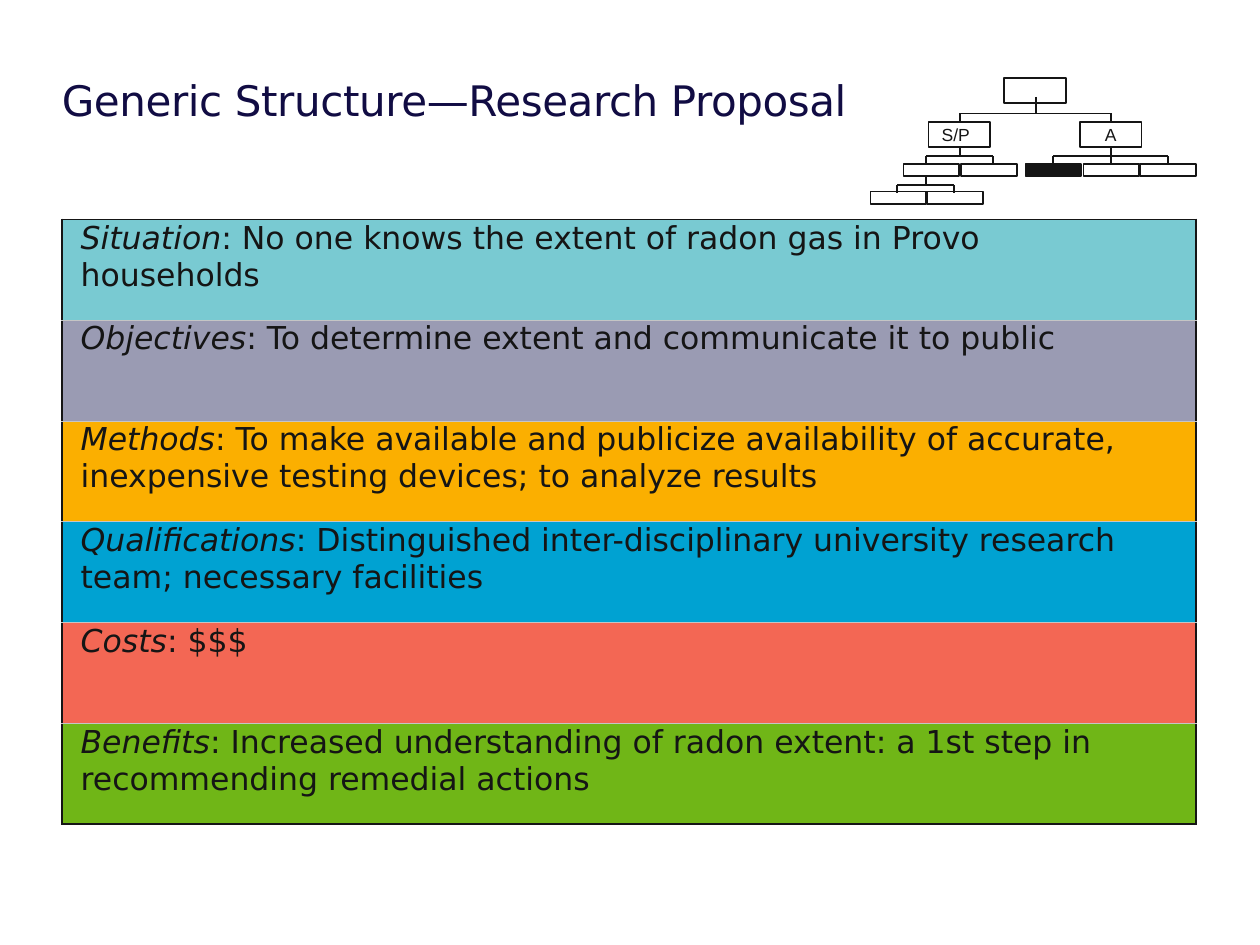
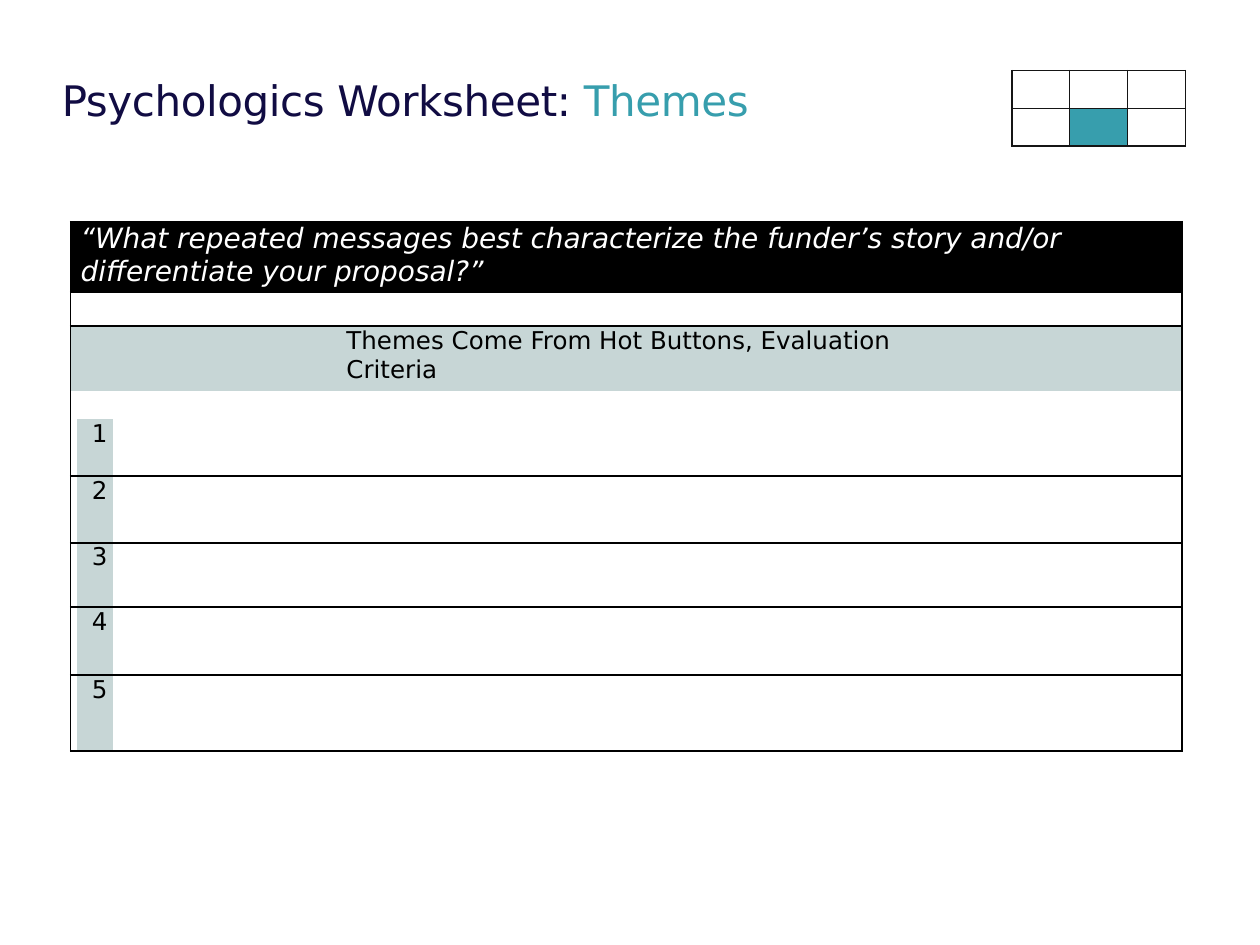
from dataclasses import dataclass

from lxml.etree import SubElement
from pptx import Presentation
from pptx.dml.color import RGBColor
from pptx.enum.shapes import MSO_CONNECTOR, MSO_SHAPE
from pptx.enum.text import MSO_ANCHOR, MSO_AUTO_SIZE, PP_ALIGN
from pptx.oxml.ns import qn
from pptx.util import Inches, Pt


@dataclass(frozen=True)
class Theme:
    font: str = "DejaVu Sans"
    label_font: str = "Arial"
    navy: str = "110C43"
    teal: str = "379EAD"
    ink: str = "151515"
    black: str = "000000"
    white: str = "FFFFFF"
    rule: str = "C5C5C5"
    mist: str = "C7D6D6"
    aqua: str = "79CAD2"
    lilac: str = "9A9BB3"
    amber: str = "FBAF00"
    blue: str = "00A2D2"
    coral: str = "F36754"
    green: str = "70B617"
    title_size: float = 24
    section_size: float = 18
    question_size: float = 16
    item_size: float = 14
    label_size: float = 10
    empty_size: float = 8
    line_width: float = 0.96
    title_spacing: int = -24


class Deck:
    def __init__(self, theme):
        self.theme = theme
        self.prs = Presentation()
        self.prs.slide_width = Inches(10)
        self.prs.slide_height = Inches(7.5)
        self.s = None

    def slide(self, *title_runs):
        self.s = self.prs.slides.add_slide(self.prs.slide_layouts[5])
        sp = self.s.shapes.title
        sp.left, sp.top = Inches(0.49), Inches(0.39)
        sp.width, sp.height = Inches(9.02), Inches(1.07)
        tf = sp.text_frame
        tf.word_wrap = True
        tf.auto_size = MSO_AUTO_SIZE.NONE
        tf.vertical_anchor = MSO_ANCHOR.TOP
        tf.margin_left = tf.margin_right = tf.margin_bottom = 0
        tf.margin_top = Inches(0.2)
        p = tf.paragraphs[0]
        p.alignment = PP_ALIGN.LEFT
        self.font(p, self.theme.title_size)
        for text, color in title_runs:
            r = p.add_run()
            r.text = text
            r.font.color.rgb = RGBColor.from_string(color)
            r._r.get_or_add_rPr().set("spc", str(self.theme.title_spacing))

    def font(self, p, size, color=None, name=None):
        p.font.name = name or self.theme.font
        p.font.size = Pt(size)
        if color:
            p.font.color.rgb = RGBColor.from_string(color)

    def line(self, x1, y1, x2, y2):
        c = self.s.shapes.add_connector(
            MSO_CONNECTOR.STRAIGHT, Inches(x1), Inches(y1), Inches(x2), Inches(y2))
        c.line.color.rgb = RGBColor.from_string(self.theme.ink)
        c.line.width = Pt(self.theme.line_width)
        SubElement(c._element.spPr, qn("a:effectLst"))

    def branch(self, stem, top, bus, bottom, drops):
        self.line(stem, top, stem, bus)
        self.line(drops[0], bus, drops[-1], bus)
        for x in drops:
            self.line(x, bus, x, bottom)

    def box(self, x, y, w, h, label="", fill=None, pad=0):
        sp = self.s.shapes.add_shape(
            MSO_SHAPE.RECTANGLE, Inches(x), Inches(y), Inches(w), Inches(h))
        sp.shadow.inherit = False
        sp.line.color.rgb = RGBColor.from_string(self.theme.ink)
        sp.line.width = Pt(self.theme.line_width)
        self.fill(sp, fill)
        if label:
            tf = sp.text_frame
            tf.margin_left = tf.margin_top = tf.margin_bottom = 0
            tf.margin_right = Inches(pad)
            tf.vertical_anchor = MSO_ANCHOR.MIDDLE
            p = tf.paragraphs[0]
            p.text = label
            p.alignment = PP_ALIGN.CENTER
            self.font(p, self.theme.label_size, self.theme.ink, self.theme.label_font)

    def fill(self, target, color):
        if color:
            target.fill.solid()
            target.fill.fore_color.rgb = RGBColor.from_string(color)
        else:
            target.fill.background()

    def table(self, x, y, cols, rows):
        frame = self.s.shapes.add_table(
            len(rows), len(cols), Inches(x), Inches(y),
            Inches(sum(cols)), Inches(sum(rows)))
        tb = frame.table
        tb.first_row = tb.horz_banding = False
        for column, width in zip(tb.columns, cols):
            column.width = Inches(width)
        for row, height in zip(tb.rows, rows):
            row.height = Inches(height)
        return tb

    def cell(self, cell, fill=None, **borders):
        cell.margin_left = cell.margin_right = cell.margin_top = cell.margin_bottom = 0
        tcPr = cell._tc.get_or_add_tcPr()
        for side in "LRTB":
            color, width = borders.get(side) or (None, 0)
            ln = SubElement(tcPr, qn(f"a:ln{side}"), w=str(Pt(width)))
            if color:
                solid = SubElement(ln, qn("a:solidFill"))
                SubElement(solid, qn("a:srgbClr"), val=color)
            else:
                SubElement(ln, qn("a:noFill"))
        self.fill(cell, fill)
        SubElement(cell.text_frame.paragraphs[0]._p, qn("a:endParaRPr"),
                   sz=str(Pt(self.theme.empty_size).centipoints))

    def cell_text(self, cell, runs, size, color, left, right=0, spacing=1.0):
        cell.margin_left, cell.margin_right = Inches(left), Inches(right)
        p = cell.text_frame.paragraphs[0]
        p.line_spacing = spacing
        self.font(p, size, color)
        for text, italic in runs:
            r = p.add_run()
            r.text = text
            r.font.italic = italic


def proposal_slide(deck):
    t = deck.theme
    deck.slide(("Generic Structure—Research Proposal", t.navy))

    deck.branch(8.22, 0.77, 0.9, 0.97, (7.62, 8.82))
    deck.branch(7.62, 1.16, 1.24, 1.3, (7.35, 7.88))
    deck.branch(8.82, 1.16, 1.24, 1.3, (8.36, 8.82, 9.27))
    deck.branch(7.35, 1.4, 1.47, 1.53, (7.12, 7.57))
    deck.box(7.97, 0.62, 0.49, 0.2)
    deck.box(7.37, 0.97, 0.49, 0.2, "S/P", pad=0.06)
    deck.box(8.57, 0.97, 0.49, 0.2, "A")
    leaves = ((7.17, 1.3), (7.63, 1.3), (8.14, 1.3), (8.6, 1.3), (9.05, 1.3),
              (6.91, 1.52), (7.36, 1.52))
    for x, y in leaves:
        deck.box(x, y, 0.44, 0.1, fill=t.ink if x == 8.14 else None)

    sections = (
        ("Situation", "No one knows the extent of radon gas in Provo households",
         t.aqua, 0.6),
        ("Objectives", "To determine extent and communicate it to public", t.lilac, 0),
        ("Methods", "To make available and publicize availability of accurate, "
         "inexpensive testing devices; to analyze results", t.amber, 0.6),
        ("Qualifications", "Distinguished inter-disciplinary university research team; "
         "necessary facilities", t.blue, 0),
        ("Costs", "$$$", t.coral, 0),
        ("Benefits", "Increased understanding of radon extent: a 1st step in "
         "recommending remedial actions", t.green, 0.6),
    )
    tb = deck.table(0.49, 1.74, [9], [0.8] * len(sections))
    outer, inner = (t.ink, 1), (t.rule, 0.25)
    last = len(sections) - 1
    for i, (name, text, color, right) in enumerate(sections):
        cell = tb.cell(i, 0)
        deck.cell(cell, color, L=outer, R=outer,
                  T=inner if i else outer, B=inner if i < last else outer)
        deck.cell_text(cell, ((name, True), (f": {text}", False)),
                       t.section_size, t.ink, 0.15, right, 1.02)


def themes_slide(deck):
    t = deck.theme
    deck.slide(("Psychologics Worksheet: ", t.navy), ("Themes", t.teal))

    heights = [0.56, 0.27, 0.51, 0.23, 0.45, 0.53, 0.51, 0.54, 0.6]
    header_rows = 4
    ruled_rows = {0, 1, 4, 5, 6, 7, 8}
    tb = deck.table(0.56, 1.76, [0.05, 0.29, 8.48], heights)
    band_fills = {0: t.black, 2: t.mist}
    edge, rule = (t.black, 1), (t.black, 1.1)
    for i in range(len(heights)):
        for j in range(3):
            number_fill = t.mist if i >= header_rows and j == 1 else None
            deck.cell(tb.cell(i, j), band_fills.get(i, number_fill),
                      L=edge if j == 0 else None,
                      R=edge if j == 2 or i < header_rows else None,
                      T=rule if i == 0 or i - 1 in ruled_rows else None,
                      B=rule if i in ruled_rows else None)
        if i < header_rows:
            tb.cell(i, 0).merge(tb.cell(i, 2))
        else:
            deck.cell_text(tb.cell(i, 1), ((str(i - header_rows + 1), False),),
                           t.item_size, t.black, 0.12)
    question = ("“What repeated messages best characterize the funder’s story and/or "
                "differentiate your proposal?”")
    deck.cell_text(tb.cell(0, 0), ((question, True),), t.question_size, t.white,
                   0.08, spacing=Pt(19))
    deck.cell_text(tb.cell(2, 0),
                   (("Themes Come From Hot Buttons, Evaluation Criteria", False),),
                   t.item_size, t.black, 2.19, 2, 1.01)

    grid = deck.table(8.03, 0.56, [0.46] * 3, [0.3] * 2)
    border = (t.ink, 1)
    for i in range(2):
        for j in range(3):
            deck.cell(grid.cell(i, j), t.teal if (i, j) == (1, 1) else None,
                      L=border, R=border, T=border, B=border)


def main():
    deck = Deck(Theme())
    proposal_slide(deck)
    themes_slide(deck)
    deck.prs.save("out.pptx")


if __name__ == "__main__":
    main()
